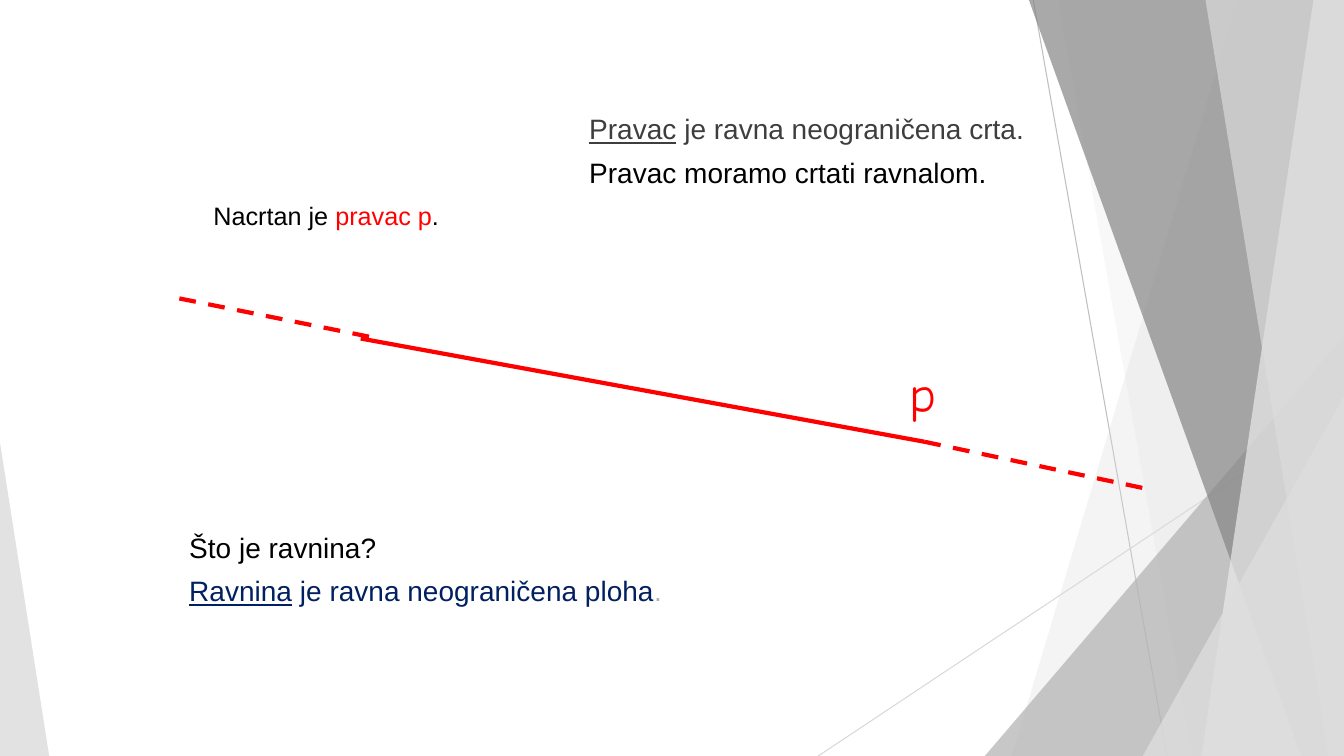
from lxml import etree
from pptx import Presentation
from pptx.dml.color import RGBColor
from pptx.enum.dml import MSO_LINE
from pptx.enum.shapes import MSO_CONNECTOR, MSO_SHAPE
from pptx.enum.text import MSO_AUTO_SIZE
from pptx.oxml.ns import qn
from pptx.util import Cm, Pt

STRAIGHT = MSO_CONNECTOR.STRAIGHT
TRIANGLE = MSO_SHAPE.ISOSCELES_TRIANGLE
DASH = MSO_LINE.DASH
FIT_SHAPE = MSO_AUTO_SIZE.SHAPE_TO_FIT_TEXT

WIDTH, HEIGHT = 33.87, 19.05

THEME = {
    "font": "Arial", "label_font": "Comic Neue",
    "body": 20, "note": 18, "label": 36,
    "thin": 0.75, "thick": 3,
    "red": "FF0000", "black": "000000", "text": "3E3E3E", "navy": "002060",
    "mid": "B2B2B2", "pale": "DDDDDD", "dark": "858585", "light": "EBEBEB",
    "rule": "BFBFBF", "soft_rule": "D9D9D9",
}

# Content: lines are (start, end, colour, weight, dash style)
RULES = [
    ((26.04, 0), (29.41, HEIGHT), "rule", "thin", None),
    ((WIDTH, 10.24), (20.62, HEIGHT), "soft_rule", "thin", None),
]
LINE_P = [
    ((9.09, 8.53), (23.29, 11.13), "red", "thick", None),
    ((23.29, 11.13), (28.91, 12.32), "red", "thick", DASH),
    ((4.52, 7.52), (9.53, 8.53), "red", "thick", DASH),
]

# Bands reach the right edge: (kind, x at top, x at bottom, colour, opacity %)
# Triangles stand on the bottom edge: (kind, box left, top, width, apex, colour, opacity %)
FACETS = [
    ("band", 31.19, 25.5, "pale", 30),
    ("band", 26.67, 30.05, "pale", 20),
    ("triangle", 24.82, 8.46, 9.05, 1, "mid", 72),
    ("band", 25.93, 32.79, "dark", 70),
    ("band", 33.1, 30.28, "light", 70),
    ("band", 30.38, 33.48, "pale", 65),
    ("triangle", 28.8, 9.98, 5.07, 1, "pale", 80),
    ("triangle", 0, 11.15, 1.24, 0, "pale", 85),
]

# Texts: (box, font, size, line spacing, paragraphs of (text, colour, underlined))
TEXTS = [
    ((22.68, 8.99, 1.22, 1.78), "label_font", "label", None,
     [[("p", "red", False)]]),
    ((5.13, 4.93, 6.38, 1.02), "font", "note", None,
     [[("Nacrtan je ", "black", False), ("pravac p", "red", False),
       (".", "black", False)]]),
    ((14.6, 2.44, 11.73, 2.49), "font", "body", 1.3,
     [[("Pravac", "text", True), (" je ravna neograničena crta.", "text", False)],
      [("Pravac moramo crtati ravnalom.", "black", False)]]),
    ((4.52, 12.98, 12.52, 2.49), "font", "body", 1.3,
     [[("Što je ravnina?", "black", False)],
      [("Ravnina", "navy", True), (" je ravna neograničena ploha", "navy", False),
       (".", "mid", False)]]),
]


def color(name):
    return RGBColor.from_string(THEME[name])


def add_line(shapes, start, end, shade, weight, dash):
    sp = shapes.add_connector(STRAIGHT, *map(Cm, start + end))
    sp.line.color.rgb = color(shade)
    sp.line.width = Pt(THEME[weight])
    if dash:
        sp.line.dash_style = dash
    etree.SubElement(sp._element.spPr, qn("a:effectLst"))


def add_band(shapes, top_x, bottom_x):
    corners = [(top_x, 0), (WIDTH, 0), (WIDTH, HEIGHT), (bottom_x, HEIGHT)]
    points = [(Cm(x), Cm(y)) for x, y in corners]
    builder = shapes.build_freeform(*points[0])
    builder.add_line_segments(points[1:], close=True)
    return builder.convert_to_shape()


def add_triangle(shapes, left, top, width, apex):
    sp = shapes.add_shape(TRIANGLE, Cm(left), Cm(top), Cm(width), Cm(HEIGHT - top))
    sp.adjustments[0] = apex
    return sp


def paint(sp, shade, opacity):
    sp.shadow.inherit = False
    sp.line.fill.background()
    sp.fill.solid()
    sp.fill.fore_color.rgb = color(shade)
    clr = sp._element.spPr.find(qn("a:solidFill"))[0]
    etree.SubElement(clr, qn("a:alpha"), val=str(opacity * 1000))


def add_text(shapes, box, font, size, spacing, paragraphs):
    tf = shapes.add_textbox(*map(Cm, box)).text_frame
    tf.word_wrap = False
    tf.auto_size = FIT_SHAPE
    for i, runs in enumerate(paragraphs):
        p = tf.add_paragraph() if i else tf.paragraphs[0]
        p.line_spacing = spacing
        for text, shade, underlined in runs:
            r = p.add_run()
            r.text = text
            r.font.color.rgb = color(shade)
            formats = {"name": THEME[font], "size": Pt(THEME[size]),
                       "underline": underlined}
            for key, value in formats.items():
                setattr(r.font, key, value)


def main():
    prs = Presentation()
    prs.slide_width, prs.slide_height = Cm(WIDTH), Cm(HEIGHT)
    shapes = prs.slides.add_slide(prs.slide_layouts[6]).shapes

    # Background decoration
    for rule in RULES:
        add_line(shapes, *rule)
    makers = {"band": add_band, "triangle": add_triangle}
    for kind, *geometry, shade, opacity in FACETS:
        paint(makers[kind](shapes, *geometry), shade, opacity)

    # Line p and the texts
    for part in LINE_P:
        add_line(shapes, *part)
    for text in TEXTS:
        add_text(shapes, *text)

    prs.save("out.pptx")


if __name__ == "__main__":
    main()
